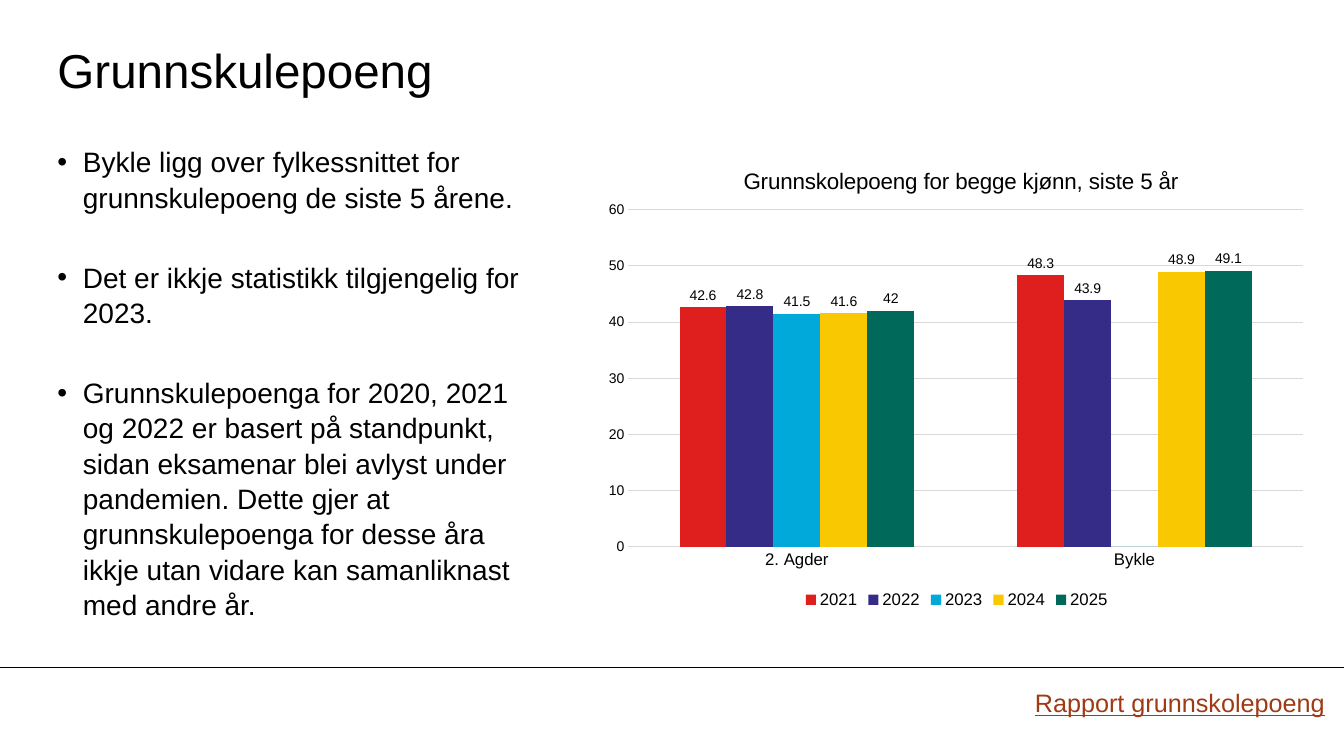
from dataclasses import dataclass

from lxml.etree import SubElement
from pptx import Presentation
from pptx.chart.data import CategoryChartData
from pptx.dml.color import RGBColor
from pptx.enum.chart import XL_CHART_TYPE, XL_LABEL_POSITION, XL_LEGEND_POSITION, XL_TICK_MARK
from pptx.enum.shapes import MSO_CONNECTOR
from pptx.enum.text import MSO_ANCHOR
from pptx.oxml import parse_xml
from pptx.oxml.ns import nsdecls, qn
from pptx.util import Cm, Pt


@dataclass(frozen=True)
class Theme:
    font: str = "Arial"
    text: str = "000000"
    link: str = "9F3A14"
    grid: str = "D9D9D9"
    years: tuple = ("DF1F1D", "342C86", "00A9DA", "FAC800", "00695A")
    title_size: int = 34
    body_size: int = 20
    link_size: int = 18
    chart_title_size: int = 16
    legend_size: int = 12
    label_size: int = 10
    line_width: float = 0.75


THEME = Theme()
SLIDE_WIDTH, SLIDE_HEIGHT = 33.87, 19.05

BULLETS = (
    "Bykle ligg over fylkessnittet for grunnskulepoeng de siste 5 årene.",
    "Det er ikkje statistikk tilgjengelig for 2023.",
    "Grunnskulepoenga for 2020, 2021 og 2022 er basert på standpunkt, sidan eksamenar "
    "blei avlyst under pandemien. Dette gjer at grunnskulepoenga for desse åra ikkje "
    "utan vidare kan samanliknast med andre år.",
)
AREAS = ("2. Agder", "Bykle")
POINTS_BY_YEAR = {
    "2021": (42.6, 48.3),
    "2022": (42.8, 43.9),
    "2023": (41.5, 0),
    "2024": (41.6, 48.9),
    "2025": (42, 49.1),
}


def style_font(font, size, color=THEME.text):
    font.name = THEME.font
    font.size = Pt(size)
    font.bold = False
    font.color.rgb = RGBColor.from_string(color)


def style_line(line, color):
    line.color.rgb = RGBColor.from_string(color)
    line.width = Pt(THEME.line_width)


def add_text_frame(slide, box, margin=0):
    text_frame = slide.shapes.add_textbox(*map(Cm, box)).text_frame
    text_frame.word_wrap = True
    text_frame.margin_left = text_frame.margin_right = Cm(margin)
    text_frame.margin_top = text_frame.margin_bottom = Cm(margin / 2)
    return text_frame


def add_title(slide, box):
    text_frame = add_text_frame(slide, box)
    text_frame.vertical_anchor = MSO_ANCHOR.MIDDLE
    text_frame.text = "Grunnskulepoeng"
    style_font(text_frame.paragraphs[0].runs[0].font, THEME.title_size)


def add_bullets(slide, box):
    text_frame = add_text_frame(slide, box)
    indent = Cm(0.64)
    for index, text in enumerate(BULLETS):
        paragraph = text_frame.add_paragraph() if index else text_frame.paragraphs[0]
        paragraph.text = text
        paragraph.line_spacing = 1.05
        if index:
            paragraph.space_before = Pt(32)
        properties = paragraph._p.get_or_add_pPr()
        properties.set("marL", str(indent))
        properties.set("indent", str(-indent))
        SubElement(properties, qn("a:buFont")).set("typeface", THEME.font)
        SubElement(properties, qn("a:buChar")).set("char", "•")
        style_font(paragraph.runs[0].font, THEME.body_size)


def set_layout(element, position, **fractions):
    """Place a chart part by fractions of the chart's width and height."""
    for layout in element.findall(qn("c:layout")):
        element.remove(layout)
    target = '<c:layoutTarget val="inner"/>' if "w" in fractions else ""
    modes = "".join(f'<c:{name}Mode val="edge"/>' for name in "xy")
    values = "".join(f'<c:{name} val="{value}"/>' for name, value in fractions.items())
    element.insert(position, parse_xml(
        f'<c:layout {nsdecls("c")}><c:manualLayout>{target}{modes}{values}'
        "</c:manualLayout></c:layout>"))


def add_points_chart(slide, box):
    data = CategoryChartData()
    data.categories = AREAS
    for year, points in POINTS_BY_YEAR.items():
        data.add_series(year, points)
    chart = slide.shapes.add_chart(
        XL_CHART_TYPE.COLUMN_CLUSTERED, *map(Cm, box), data).chart
    style_font(chart.font, THEME.label_size)

    # Title and plot position
    title = chart.chart_title
    title.text_frame.text = "Grunnskolepoeng for begge kjønn, siste 5 år"
    style_font(title.text_frame.paragraphs[0].runs[0].font, THEME.chart_title_size)
    title.include_in_layout = False
    set_layout(title._element, 1, x=0.2, y=0.04)
    set_layout(chart._chartSpace.chart.plotArea, 0, x=0.046, y=0.14, w=0.933, h=0.72)

    # Legend
    chart.has_legend = True
    chart.legend.position = XL_LEGEND_POSITION.BOTTOM
    chart.legend.include_in_layout = False
    style_font(chart.legend.font, THEME.legend_size)

    # Axes
    for axis, size in ((chart.category_axis, THEME.legend_size),
                       (chart.value_axis, THEME.label_size)):
        axis.major_tick_mark = axis.minor_tick_mark = XL_TICK_MARK.NONE
        style_font(axis.tick_labels.font, size)
    style_line(chart.category_axis.format.line, THEME.grid)
    values = chart.value_axis
    values.minimum_scale, values.maximum_scale, values.major_unit = 0, 60, 10
    values.format.line.fill.background()
    style_line(values.major_gridlines.format.line, THEME.grid)

    # Columns; the number format hides the label of the missing value
    plot = chart.plots[0]
    plot.gap_width, plot.overlap = 219, 0
    plot.vary_by_categories = False
    for series, color in zip(plot.series, THEME.years):
        series.format.fill.solid()
        series.format.fill.fore_color.rgb = RGBColor.from_string(color)
        series.invert_if_negative = False
        labels = series.data_labels
        labels.show_value = True
        labels.position = XL_LABEL_POSITION.OUTSIDE_END
        labels.number_format = '[=0]"";General'
        labels.number_format_is_linked = False
        style_font(labels.font, THEME.label_size)


def add_footer(slide, top):
    rule = slide.shapes.add_connector(
        MSO_CONNECTOR.STRAIGHT, 0, Cm(top), Cm(SLIDE_WIDTH), Cm(top))
    style_line(rule.line, THEME.text)
    SubElement(rule._element.spPr, qn("a:effectLst"))

    left = 25.83
    text_frame = add_text_frame(
        slide, (left, top + 0.39, SLIDE_WIDTH - left, 1.02), margin=0.25)
    text_frame.text = "Rapport grunnskolepoeng"
    font = text_frame.paragraphs[0].runs[0].font
    style_font(font, THEME.link_size, THEME.link)
    font.underline = True


def main():
    presentation = Presentation()
    presentation.slide_width, presentation.slide_height = Cm(SLIDE_WIDTH), Cm(SLIDE_HEIGHT)
    slide = presentation.slides.add_slide(presentation.slide_layouts[6])
    margin = 1.45
    add_footer(slide, 16.81)
    add_title(slide, (margin, 0.81, 28.19, 1.9))
    add_bullets(slide, (margin, 3.61, 11.99, 12.5))
    add_points_chart(slide, (14.99, 3.63, 18.24, 11.81))
    presentation.save("out.pptx")


if __name__ == "__main__":
    main()
